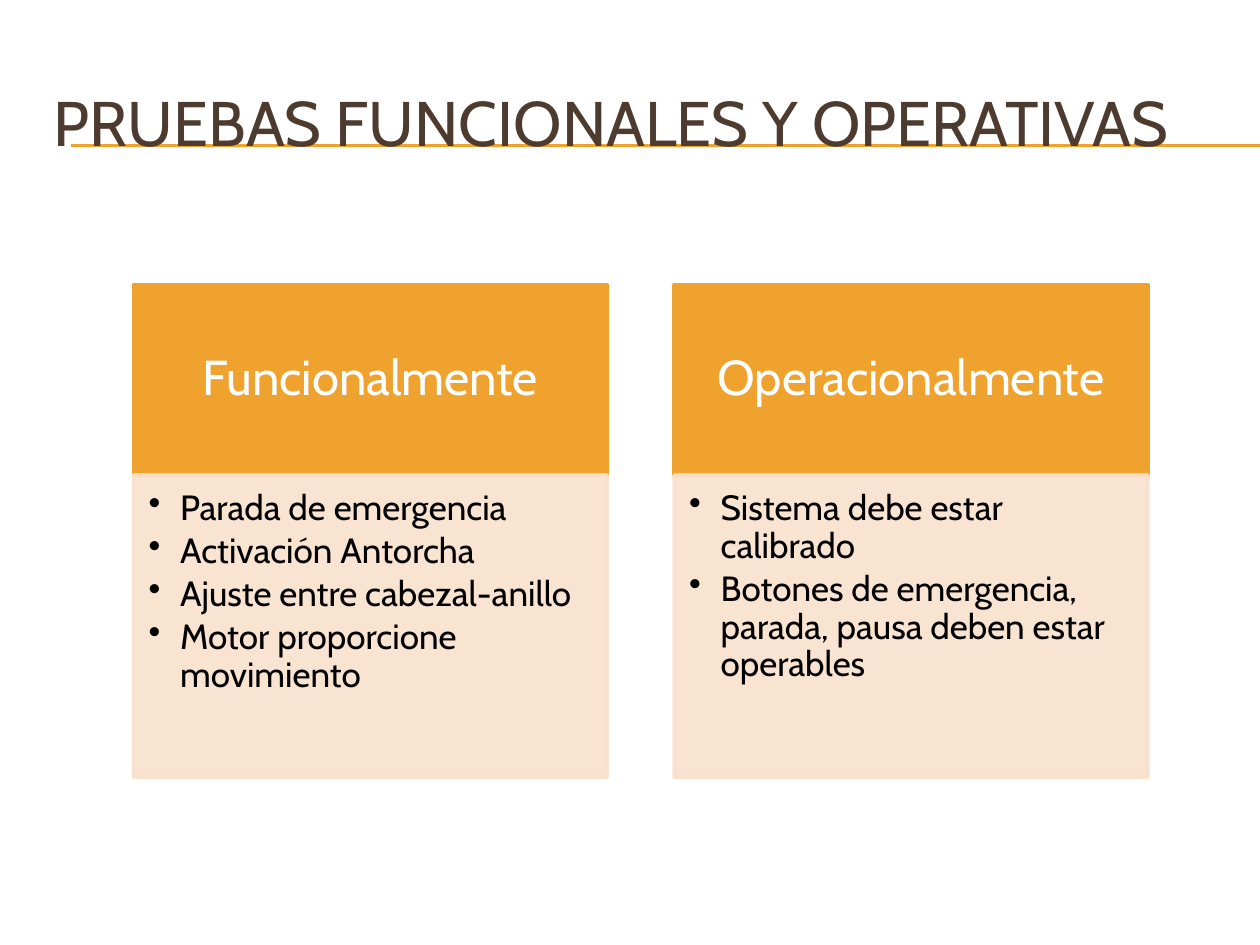
from lxml.etree import SubElement
from pptx import Presentation
from pptx.dml.color import RGBColor
from pptx.enum.shapes import MSO_CONNECTOR, MSO_SHAPE
from pptx.enum.text import MSO_ANCHOR, PP_ALIGN
from pptx.oxml.ns import qn
from pptx.util import Inches, Pt

TITLE = "PRUEBAS FUNCIONALES Y OPERATIVAS"
COLUMNS = [
    ("Funcionalmente", [
        "Parada de emergencia",
        "Activación Antorcha",
        "Ajuste entre cabezal-anillo",
        "Motor proporcione movimiento",
    ]),
    ("Operacionalmente", [
        "Sistema debe estar calibrado",
        "Botones de emergencia, parada, pausa deben estar operables",
    ]),
]
COLORS = {"accent": "F0A22E", "panel": "F9E0CD", "title": "4E3B30",
          "heading": "FFFFFF", "body": "000000"}
FONT = "Cabin"
SLIDE_WIDTH, SLIDE_HEIGHT = 10, 7.5
RULE_LEFT, RULE_TOPS = 0.56, (1.15, 1.16)
COLUMN_LEFT, COLUMN_STEP, COLUMN_WIDTH = 1.06, 4.29, 3.76
HEADING_TOP, HEADING_HEIGHT, BODY_HEIGHT = 2.26, 1.51, 2.4
HEADING_MARGINS = (0.22, 0.12, 0.22, 0.12)
BODY_MARGINS = (0.12, 0.12, 0.16, 0.17)
BULLET_INDENT = 0.25
PANEL_ALPHA = 90


def color(name):
    return RGBColor.from_string(COLORS[name])


def add_rule(slide, top):
    rule = slide.shapes.add_connector(
        MSO_CONNECTOR.STRAIGHT, Inches(RULE_LEFT), Inches(top),
        Inches(SLIDE_WIDTH), Inches(top))
    rule.line.color.rgb = color("accent")
    rule.line.width = Pt(0.75)
    SubElement(rule._element.spPr, qn("a:effectLst"))


def add_box(slide, place, fill, margins, anchor):
    shape = slide.shapes.add_shape(MSO_SHAPE.RECTANGLE, *map(Inches, place))
    shape.shadow.inherit = False
    shape.fill.solid()
    shape.fill.fore_color.rgb = color(fill)
    shape.line.color.rgb = color(fill)
    shape.line.width = Pt(2)
    frame = shape.text_frame
    frame.word_wrap = True
    frame.vertical_anchor = anchor
    for side, margin in zip(("left", "top", "right", "bottom"), margins):
        setattr(frame, f"margin_{side}", Inches(margin))
    return shape


def write(paragraph, text, size, color_name, **layout):
    run = paragraph.add_run()
    run.text = text
    run.font.color.rgb = color(color_name)
    for name, value in {"name": FONT, "size": Pt(size)}.items():
        setattr(run.font, name, value)
    for name, value in layout.items():
        setattr(paragraph, name, value)


def add_bullet(paragraph):
    properties = paragraph._p.get_or_add_pPr()
    properties.set("marL", str(Inches(BULLET_INDENT)))
    properties.set("indent", str(-Inches(BULLET_INDENT)))
    SubElement(properties, qn("a:buChar"), char="•")


def add_column(slide, left, heading, items):
    header = add_box(slide, (left, HEADING_TOP, COLUMN_WIDTH, HEADING_HEIGHT),
                     "accent", HEADING_MARGINS, MSO_ANCHOR.MIDDLE)
    write(header.text_frame.paragraphs[0], heading, 28, "heading",
          alignment=PP_ALIGN.CENTER, line_spacing=0.9)

    body = add_box(
        slide, (left, HEADING_TOP + HEADING_HEIGHT, COLUMN_WIDTH, BODY_HEIGHT),
        "panel", BODY_MARGINS, MSO_ANCHOR.TOP)
    for tint in body._element.spPr.iter(qn("a:srgbClr")):
        SubElement(tint, qn("a:alpha"), val=str(PANEL_ALPHA * 1000))
    frame = body.text_frame
    for index, item in enumerate(items):
        paragraph = frame.add_paragraph() if index else frame.paragraphs[0]
        write(paragraph, item, 20, "body", level=1, alignment=PP_ALIGN.LEFT,
              line_spacing=0.9, space_after=Pt(3))
        add_bullet(paragraph)


def main():
    presentation = Presentation()
    presentation.slide_width = Inches(SLIDE_WIDTH)
    presentation.slide_height = Inches(SLIDE_HEIGHT)
    slide = presentation.slides.add_slide(presentation.slide_layouts[6])

    for top in RULE_TOPS:
        add_rule(slide, top)

    title = slide.shapes.add_textbox(*map(Inches, (0.33, 0.5, 9.5, 0.92)))
    title.text_frame.word_wrap = True
    title.text_frame.vertical_anchor = MSO_ANCHOR.MIDDLE
    write(title.text_frame.paragraphs[0], TITLE, 36, "title")

    for index, (heading, items) in enumerate(COLUMNS):
        add_column(slide, COLUMN_LEFT + index * COLUMN_STEP, heading, items)

    presentation.save("out.pptx")


if __name__ == "__main__":
    main()
